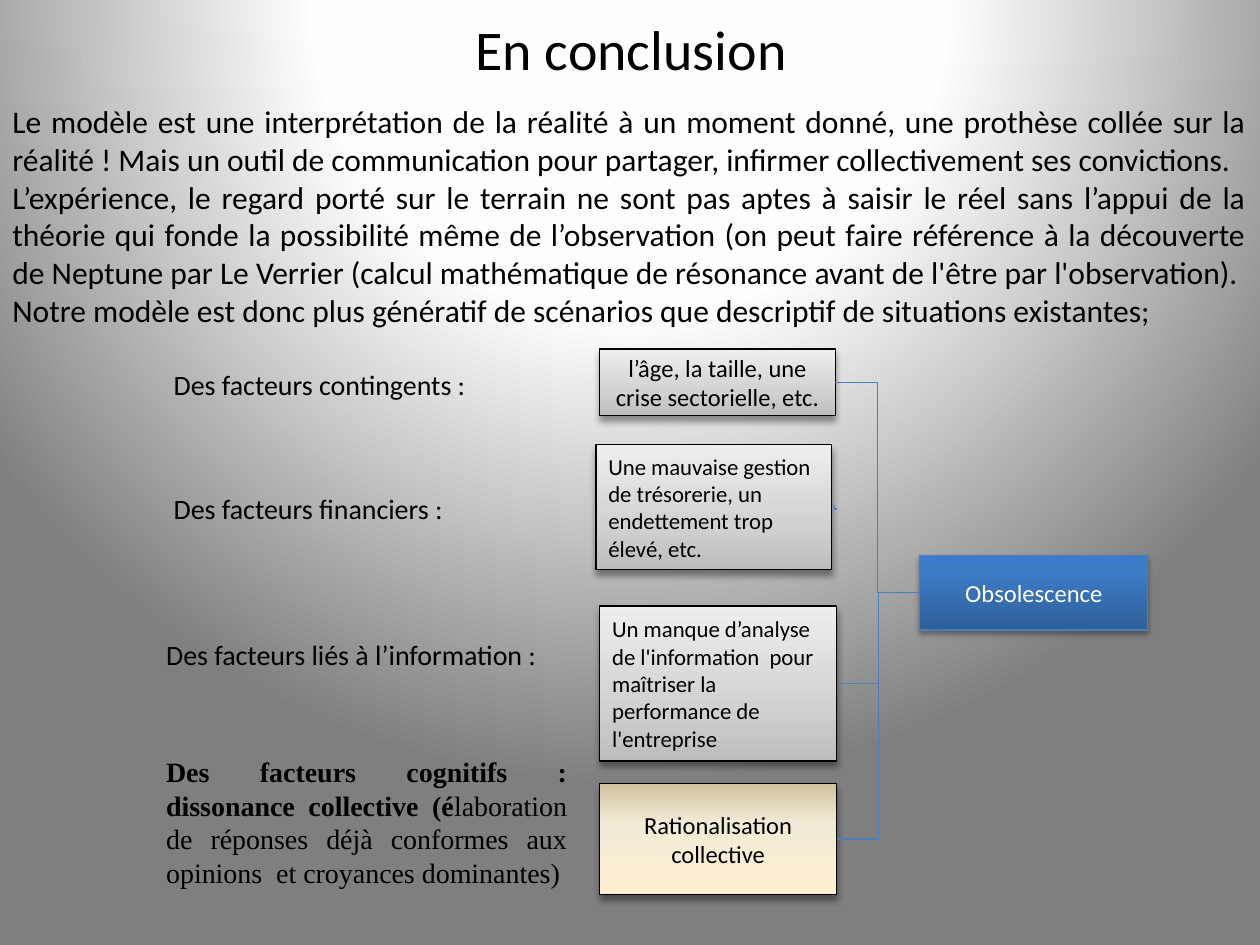
from lxml import etree
from pptx import Presentation
from pptx.dml.color import RGBColor
from pptx.enum.shapes import MSO_CONNECTOR, MSO_SHAPE
from pptx.enum.text import MSO_ANCHOR, MSO_AUTO_SIZE, PP_ALIGN
from pptx.oxml.ns import qn
from pptx.util import Inches, Pt

LEFT, CENTER, JUSTIFY = PP_ALIGN.LEFT, PP_ALIGN.CENTER, PP_ALIGN.JUSTIFY
MIDDLE = MSO_ANCHOR.MIDDLE
RECTANGLE = MSO_SHAPE.RECTANGLE
ELBOW = MSO_CONNECTOR.ELBOW
LEFT_SITE, RIGHT_SITE = 1, 3

BLACK = RGBColor(0x00, 0x00, 0x00)
WHITE = RGBColor(0xFF, 0xFF, 0xFF)
BLUE = RGBColor(0x4B, 0x7E, 0xBC)

BACKGROUND = [(0, "FFFFFF"), (40, "FEFEFE"), (100, "7F7F7F")]
BLUE_STOPS = [(0, "2F5F99"), (80, "3D7CC7"), (100, "3A7CCB")]
GRAY_STOPS = [(0, "BDBDBD"), (35, "D1D1D1"), (100, "EEEEEE")]
CREAM_STOPS = [(0, "FFEFD1"), (65, "F0EBD5"), (100, "D1C39F")]

# Opacity %, blur and distance in points
SOFT_SHADOW = (35, 3.1, 1.8)
STRONG_SHADOW = (40, 4, 3)

TITLE = "En conclusion"
INTRODUCTION = [
    "Le modèle est une interprétation de la réalité à un moment donné, une prothèse "
    "collée sur la réalité ! Mais un outil de communication pour partager, infirmer "
    "collectivement ses convictions.",
    "L’expérience, le regard porté sur le terrain ne sont pas aptes à saisir le réel "
    "sans l’appui de la théorie qui fonde la possibilité même de l’observation (on peut "
    "faire référence à la découverte de Neptune par Le Verrier (calcul mathématique de "
    "résonance avant de l'être par l'observation).",
    "Notre modèle est donc plus génératif de scénarios que descriptif de situations "
    "existantes;",
]

# Position, text, size, alignment, gradient
CAUSES = [
    ((4.76, 2.77, 1.87, 0.53), "l’âge, la taille, une crise sectorielle, etc.",
     14, CENTER, GRAY_STOPS),
    ((4.73, 3.53, 1.87, 0.99),
     "Une mauvaise gestion de trésorerie, un endettement trop élevé, etc.",
     13, LEFT, GRAY_STOPS),
    ((4.76, 4.81, 1.88, 1.23),
     "Un manque d’analyse de l'information  pour maîtriser la performance de l'entreprise",
     13, LEFT, GRAY_STOPS),
    ((4.76, 6.22, 1.88, 0.88), "Rationalisation collective", 14, CENTER, CREAM_STOPS),
]
RESULT_POSITION, RESULT = (7.3, 4.41, 1.81, 0.59), "Obsolescence"

# Position, alignment, font, runs of (text, bold)
FACTORS = [
    ((1.28, 2.87, 3.41, 0.37), JUSTIFY, "Calibri", [("Des facteurs contingents :", False)]),
    ((1.28, 3.85, 3.52, 0.37), JUSTIFY, "Calibri", [("Des facteurs financiers :", False)]),
    ((1.22, 5.01, 3.18, 0.37), LEFT, "Calibri",
     [("Des facteurs liés à l’information :", False)]),
    ((1.22, 5.94, 3.38, 1.18), JUSTIFY, "Times New Roman",
     [("Des facteurs cognitifs : dissonance collective (é", True),
      ("laboration de réponses déjà conformes aux opinions  et croyances dominantes)",
       False)]),
]


def inches(values):
    return [Inches(value) for value in values]


def add_color(parent, color):
    return etree.SubElement(parent, qn("a:srgbClr"), val=color)


def set_gradient(fill, owner, stops, radial=False):
    """Fill with the stops, from bottom to top or in circles from above the slide."""
    fill.gradient()
    gradient = owner.find(".//" + qn("a:gradFill"))
    for child in list(gradient):
        gradient.remove(child)
    stop_list = etree.SubElement(gradient, qn("a:gsLst"))
    for percent, color in stops:
        add_color(etree.SubElement(stop_list, qn("a:gs"), pos=str(percent * 1000)), color)
    if radial:
        path = etree.SubElement(gradient, qn("a:path"), path="circle")
        etree.SubElement(path, qn("a:fillToRect"), l="50000", t="-80000",
                         r="50000", b="180000")
    else:
        etree.SubElement(gradient, qn("a:lin"), ang="16200000", scaled="0")


def add_shadow(shape, opacity, blur, distance):
    shape.shadow.inherit = False
    effects = shape._element.spPr.find(qn("a:effectLst"))
    shadow = etree.SubElement(effects, qn("a:outerShdw"), blurRad=str(Pt(blur)),
                              dist=str(Pt(distance)), dir="5400000", rotWithShape="0")
    etree.SubElement(add_color(shadow, "000000"), qn("a:alpha"), val=str(opacity * 1000))


def write(paragraph, runs, size, alignment, color=BLACK, font="Calibri"):
    paragraph.alignment = alignment
    for text, bold in runs:
        run = paragraph.add_run()
        run.text = text
        run.font.name = font
        run.font.size = Pt(size)
        run.font.bold = bold
        run.font.color.rgb = color


def add_box(slide, position, text, size, alignment, stops,
            text_color=BLACK, line_color=BLACK, shadow=STRONG_SHADOW):
    box = slide.shapes.add_shape(RECTANGLE, *inches(position))
    set_gradient(box.fill, box._element.spPr, stops)
    box.line.color.rgb = line_color
    box.line.width = Pt(0.75)
    add_shadow(box, *shadow)
    box.text_frame.word_wrap = True
    box.text_frame.vertical_anchor = MIDDLE
    write(box.text_frame.paragraphs[0], [(text, False)], size, alignment, text_color)
    return box


def add_text(slide, position, paragraphs, size, alignment, font="Calibri"):
    frame = slide.shapes.add_textbox(*inches(position)).text_frame
    frame.word_wrap = True
    frame.auto_size = MSO_AUTO_SIZE.SHAPE_TO_FIT_TEXT
    for index, runs in enumerate(paragraphs):
        paragraph = frame.add_paragraph() if index else frame.paragraphs[0]
        write(paragraph, runs, size, alignment, font=font)


def add_elbow(slide, start, end):
    connector = slide.shapes.add_connector(ELBOW, *inches(start + end))
    connector.line.color.rgb = BLUE
    connector.line.width = Pt(0.75)
    etree.SubElement(connector._element.spPr, qn("a:effectLst"))
    return connector


def main():
    presentation = Presentation()
    presentation.slide_width, presentation.slide_height = Inches(10), Inches(7.5)
    slide = presentation.slides.add_slide(presentation.slide_layouts[5])
    set_gradient(slide.background.fill, slide._element, BACKGROUND, radial=True)

    title = slide.shapes.title
    title.left, title.top, title.width, title.height = inches((0.51, 0, 9, 0.76))
    title.text_frame.vertical_anchor = MIDDLE
    write(title.text_frame.paragraphs[0], [(TITLE, False)], 32, CENTER)

    result = add_box(slide, RESULT_POSITION, RESULT, 14, CENTER, BLUE_STOPS,
                     WHITE, BLUE, SOFT_SHADOW)
    causes = [add_box(slide, *cause) for cause in CAUSES]
    for position, alignment, font, runs in FACTORS:
        add_text(slide, position, [runs], 16, alignment, font)

    contingent, _, information, cognitive = causes
    for cause in (contingent, cognitive, information):
        connector = add_elbow(slide, (0, 0), (1, 1))
        connector.begin_connect(cause, RIGHT_SITE)
        connector.end_connect(result, LEFT_SITE)
    add_elbow(slide, (6.64, 4.04), (6.61, 4.02))

    add_text(slide, (0, 0.76, 9.99, 1.92), [[(text, False)] for text in INTRODUCTION],
             18, JUSTIFY)
    presentation.save("out.pptx")


if __name__ == "__main__":
    main()
